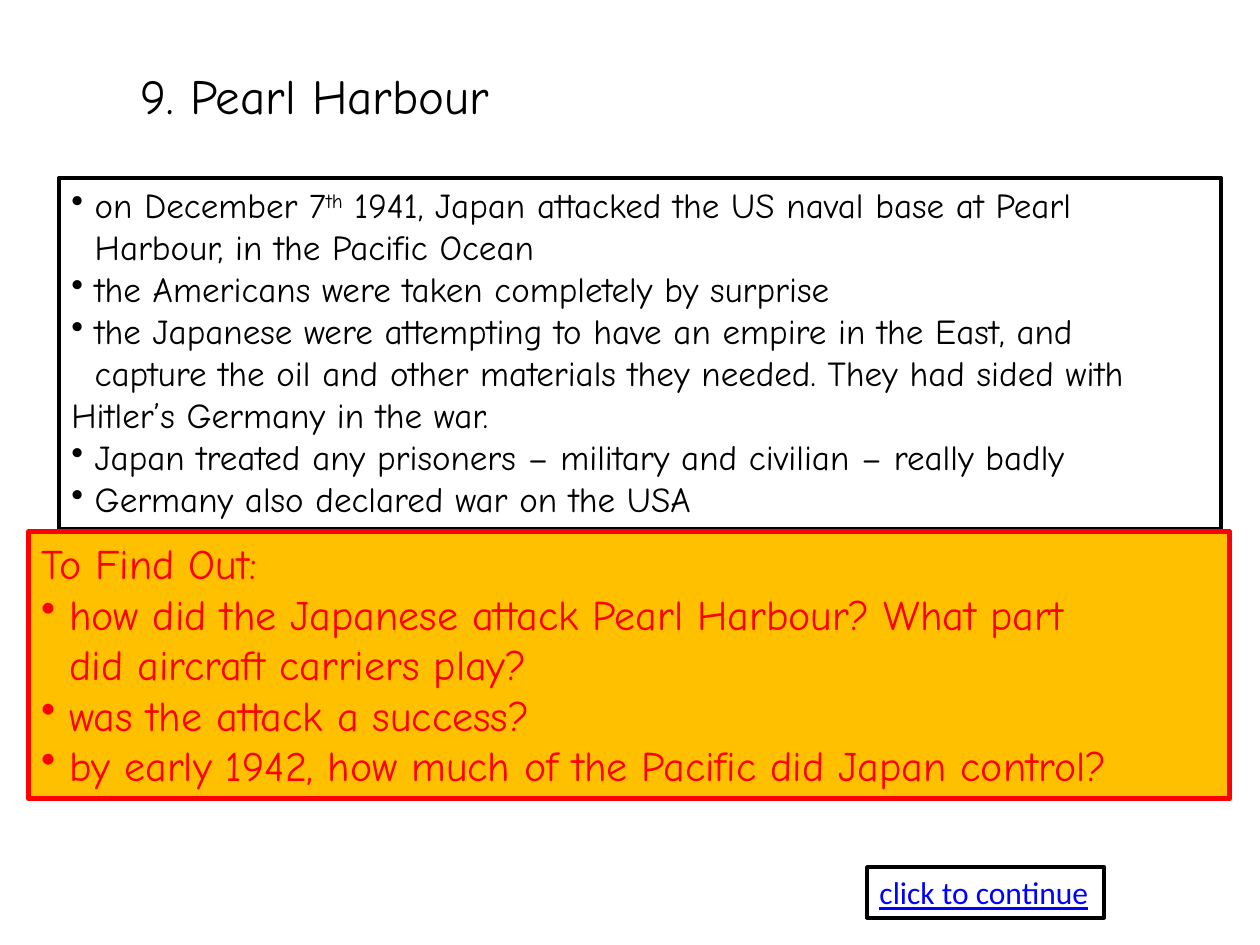
import pptx
import pptx.dml.color
import pptx.enum.shapes
import pptx.enum.text
import pptx.oxml.ns
import pptx.util
from lxml import etree

Cm = pptx.util.Cm
Pt = pptx.util.Pt
HUES = {"ink": "000000", "red": "FF0000", "gold": "FFC000", "link": "0000FF"}

FACTS = [
    ("dot", "on December 7^th^ 1941, Japan attacked the US naval base at Pearl"),
    ("next", "Harbour, in the Pacific Ocean"),
    ("dot", "the Americans were taken completely by surprise"),
    ("dot", "the Japanese were attempting to have an empire in the East, and"),
    ("next", "capture the oil and other materials they needed. "
             "They had sided with Hitler’s Germany in the war."),
    ("dot", "Japan treated any prisoners – military and civilian – really badly"),
    ("dot", "Germany also declared war on the USA"),
]
TASKS = [
    ("plain", "To Find Out:"),
    ("dot", "how did the Japanese attack Pearl Harbour? What part"),
    ("next", "did aircraft carriers play?"),
    ("dot", "was the attack a success?"),
    ("dot", "by early 1942, how much of the Pacific did Japan control?"),
]


def tint(name):
    """Return the named colour."""
    return pptx.dml.color.RGBColor.from_string(HUES[name])


def indent(para, kind, gap):
    """Give a paragraph its bullet or its first-line indent."""
    props = para._p.get_or_add_pPr()
    dot = kind == "dot"
    first = {"dot": -gap, "next": gap, "plain": 0}[kind]
    props.set("marL", str(int(Cm(gap if dot else 0))))
    props.set("indent", str(int(Cm(first))))
    if dot:
        mark = etree.SubElement(props, pptx.oxml.ns.qn("a:buChar"))
        mark.set("char", "•")


def write(frame, lines, hue, style, gap=0):
    """Fill a text frame with lines, raising text between carets."""
    setup = {"word_wrap": True,
             "vertical_anchor": pptx.enum.text.MSO_ANCHOR.TOP}
    for key, value in setup.items():
        setattr(frame, key, value)
    for i, (kind, text) in enumerate(lines):
        para = frame.add_paragraph() if i else frame.paragraphs[0]
        para.alignment = pptx.enum.text.PP_ALIGN.LEFT
        indent(para, kind, gap)
        for j, part in enumerate(text.split("^")):
            run = para.add_run()
            run.text = part
            for key, value in style.items():
                setattr(run.font, key, value)
            run.font.color.rgb = tint(hue)
            if j % 2:
                run._r.get_or_add_rPr().set("baseline", "30000")


def panel(slide, box, edge, width, fill=None):
    """Draw a framed box and return its text frame."""
    shape = slide.shapes.add_shape(
        pptx.enum.shapes.MSO_SHAPE.RECTANGLE, *map(Cm, box))
    shape.shadow.inherit = False
    if fill:
        shape.fill.solid()
        shape.fill.fore_color.rgb = tint(fill)
    else:
        shape.fill.background()
    shape.line.color.rgb = tint(edge)
    shape.line.width = Pt(width)
    return shape.text_frame


def title(slide, box):
    """Place the heading."""
    frame = slide.shapes.add_textbox(*map(Cm, box)).text_frame
    style = {"name": "Comic Neue", "size": Pt(28)}
    write(frame, [("plain", "9. Pearl Harbour")], "ink", style)


def facts(slide, box):
    """Place the framed list of facts."""
    style = {"name": "Comic Neue", "size": Pt(20)}
    write(panel(slide, box, "ink", 2.25), FACTS, "ink", style, 0.47)


def tasks(slide, box):
    """Place the gold box of questions."""
    style = {"name": "Comic Neue", "size": Pt(24)}
    write(panel(slide, box, "red", 3, "gold"), TASKS, "red", style, 0.57)


def button(slide, box):
    """Place the framed prompt to go on."""
    style = {"name": "Calibri", "size": Pt(18), "underline": True}
    write(panel(slide, box, "ink", 2.25),
          [("plain", "click to continue")], "link", style)


def main():
    """Build and save the slide."""
    deck = pptx.Presentation()
    deck.slide_width, deck.slide_height = Cm(25.4), Cm(19.05)
    slide = deck.slides.add_slide(deck.slide_layouts[6])
    title(slide, (2.59, 1.19, 16.08, 1.45))
    facts(slide, (1.19, 3.58, 23.42, 7.09))
    tasks(slide, (0.58, 10.72, 24.21, 5.38))
    button(slide, (17.48, 17.48, 4.78, 1.02))
    deck.save("out.pptx")


if __name__ == "__main__":
    main()
